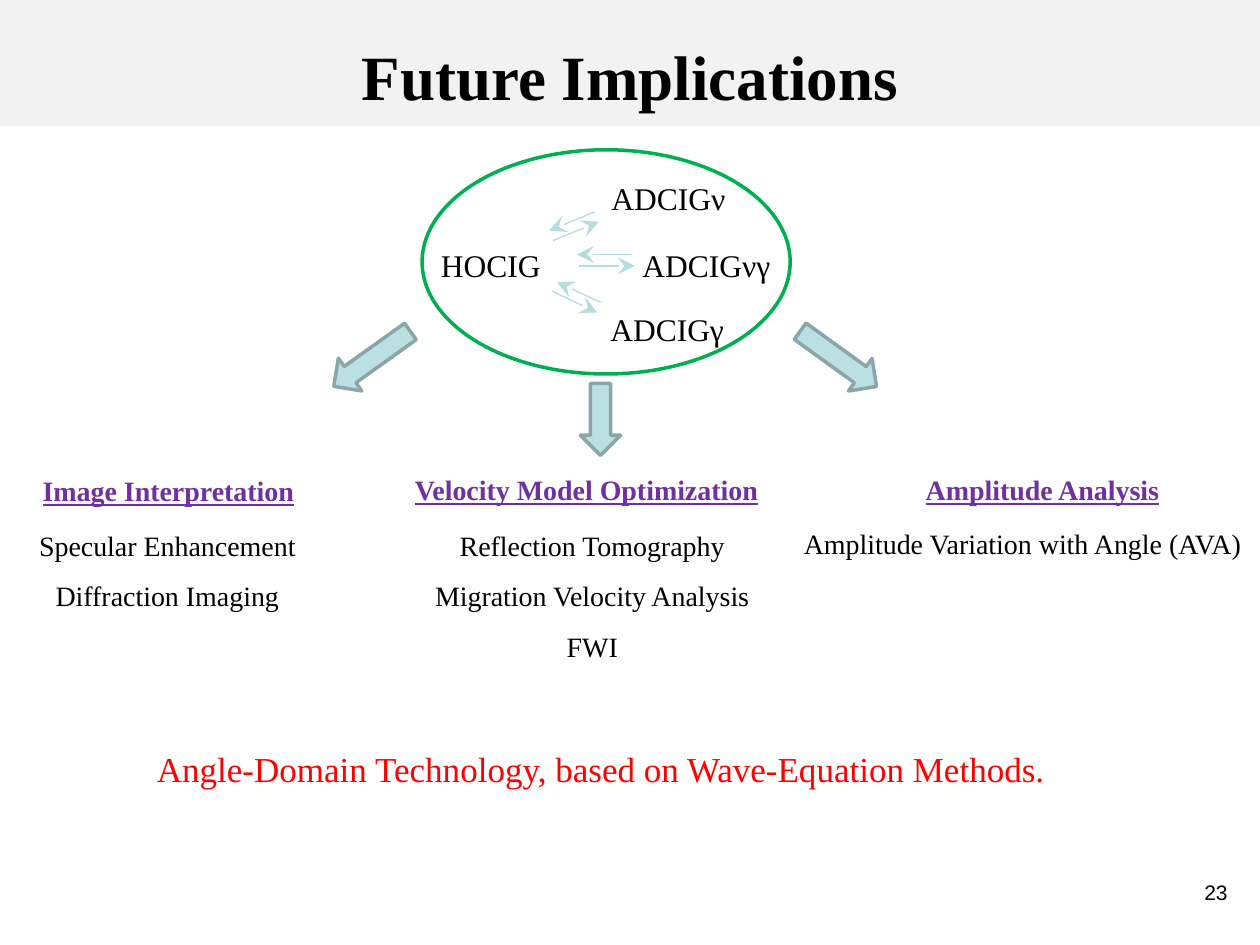
import pptx
import pptx.util
import pptx.dml.color
import pptx.enum.shapes
import pptx.enum.text
import pptx.oxml
import pptx.oxml.ns

Cm, Pt = pptx.util.Cm, pptx.util.Pt
KIND = pptx.enum.shapes.MSO_SHAPE
ALIGN = pptx.enum.text.PP_ALIGN
FIT = pptx.enum.text.MSO_AUTO_SIZE
ANCHOR = pptx.enum.text.MSO_ANCHOR

# Content: places are left, top, width, height in cm
TITLE = "Future Implications"
NUMBER = "23"
CLAIM = "Angle-Domain Technology, based on Wave-Equation Methods."
GATHERS = [
    ("HOCIG", (8.41, 4.45, 2.97, 1.42)),
    ("ADCIGν", (11.99, 3.1, 2.97, 1.42)),
    ("ADCIGγ", (11.86, 5.74, 3.18, 1.42)),
    ("ADCIGνγ", (12.65, 4.45, 3.18, 1.27)),
]
# Each link runs from its first point to its arrowhead
LINKS = [
    ((11.15, 4.85), (12.07, 4.47)),
    ((11.99, 4.27), (11.07, 4.65)),
    ((11.13, 5.87), (12.04, 6.3)),
    ((12.12, 6.1), (11.23, 5.69)),
    ((11.68, 5.36), (12.8, 5.36)),
    ((12.75, 5.13), (11.63, 5.13)),
]
# Heading, its left and top, items, their place
USES = [
    ("Image Interpretation", (-1.9, 9.09),
     ["Specular Enhancement", "Diffraction Imaging"],
     (0.3, 10.19, 6.15, 2.18)),
    ("Velocity Model Optimization", (6.53, 9.07),
     ["Reflection Tomography", "Migration Velocity Analysis", "FWI"],
     (8.31, 10.19, 7.26, 3.33)),
    ("Amplitude Analysis", (15.72, 9.07),
     ["Amplitude Variation with Angle (AVA)"],
     (15.32, 10.16, 10.59, 1.17)),
]
HEAD = (10.59, 1.17)
# Place and turn of each block arrow
ARROWS = [
    ((15.95, 6.83, 1.9, 0.81), 35.9),
    ((6.55, 6.83, 1.9, 0.81), 144.4),
    ((11.38, 8.05, 1.45, 0.81), 90),
]

# Formats
SERIF = {"name": "Times New Roman"}
LABEL = {**SERIF, "size": Pt(18)}
ITEM = {**SERIF, "size": Pt(16)}
TOPIC = {**ITEM, "bold": True, "underline": True}
BODY = {"alignment": ALIGN.CENTER, "line_spacing": 1.5}


def paint(color, code):
    color.rgb = pptx.dml.color.RGBColor.from_string(code)


def apply(thing, style):
    for key, value in style.items():
        setattr(thing, key, value)


def write(frame, lines, font, code="000000", para=BODY):
    frame.text = "\n".join(lines)
    for item in frame.paragraphs:
        apply(item, para)
        apply(item.font, font)
        paint(item.font.color, code)


def label(slide, place, lines, font, code="000000", para=BODY,
          fit=FIT.SHAPE_TO_FIT_TEXT):
    frame = slide.shapes.add_textbox(*map(Cm, place)).text_frame
    apply(frame, {"word_wrap": True, "auto_size": fit})
    write(frame, lines, font, code, para)


def draw(slide, kind, place, fill=None, line=None, turn=0):
    shape = slide.shapes.add_shape(kind, *map(Cm, place))
    shape.shadow.inherit = False
    shape.rotation = turn
    if fill:
        shape.fill.solid()
        paint(shape.fill.fore_color, fill)
    else:
        shape.fill.background()
    if line:
        paint(shape.line.color, line)
        shape.line.width = Pt(2)
    else:
        shape.line.fill.background()
    return shape


def link(slide, start, end):
    line = slide.shapes.add_connector(
        pptx.enum.shapes.MSO_CONNECTOR.STRAIGHT, *map(Cm, start + end))
    paint(line.line.color, "B6DCDF")
    line.line.width = Pt(0.75)
    space = pptx.oxml.ns.nsdecls("a")
    line.line._get_or_add_ln().append(pptx.oxml.parse_xml(
        f'<a:tailEnd {space} type="stealth" w="lg" len="lg"/>'))
    line.element.spPr.append(pptx.oxml.parse_xml(f"<a:effectLst {space}/>"))


def main():
    deck = pptx.Presentation()
    deck.slide_width, deck.slide_height = Cm(25.4), Cm(19.05)
    slide = deck.slides.add_slide(deck.slide_layouts[5])

    # Title over its band
    title = slide.shapes.title
    band = draw(slide, KIND.RECTANGLE, (0, -0.08, 25.4, 2.62), "F2F2F2")
    title.element.addprevious(band.element)
    apply(title, {"left": Cm(1.27), "top": Cm(-0.08),
                  "width": Cm(22.86), "height": Cm(3.18)})
    apply(title.text_frame, {"auto_size": FIT.NONE,
                             "vertical_anchor": ANCHOR.MIDDLE})
    write(title.text_frame, [TITLE], {**SERIF, "size": Pt(36), "bold": True},
          para={"alignment": ALIGN.CENTER})

    # Gathers and the links between them
    draw(slide, KIND.OVAL, (8.51, 3.02, 7.42, 4.52), line="00B050")
    for text, place in GATHERS:
        label(slide, place, [text], LABEL)
    for start, end in LINKS:
        link(slide, start, end)

    # Uses
    for place, turn in ARROWS:
        draw(slide, KIND.RIGHT_ARROW, place, "BBE0E3", "8AA6A8", turn)
    for topic, spot, items, place in USES:
        label(slide, spot + HEAD, [topic], TOPIC, "7030A0")
        label(slide, place, items, ITEM)

    # Claim and slide number
    label(slide, (2.49, 14.53, 19.25, 1.4), [CLAIM],
          {**SERIF, "size": Pt(20)}, "FF0000")
    label(slide, (19.08, 17.6, 5.92, 1.32), [NUMBER],
          {"name": "Arial", "size": Pt(12)},
          para={"alignment": ALIGN.RIGHT}, fit=FIT.NONE)

    deck.save("out.pptx")


if __name__ == "__main__":
    main()
